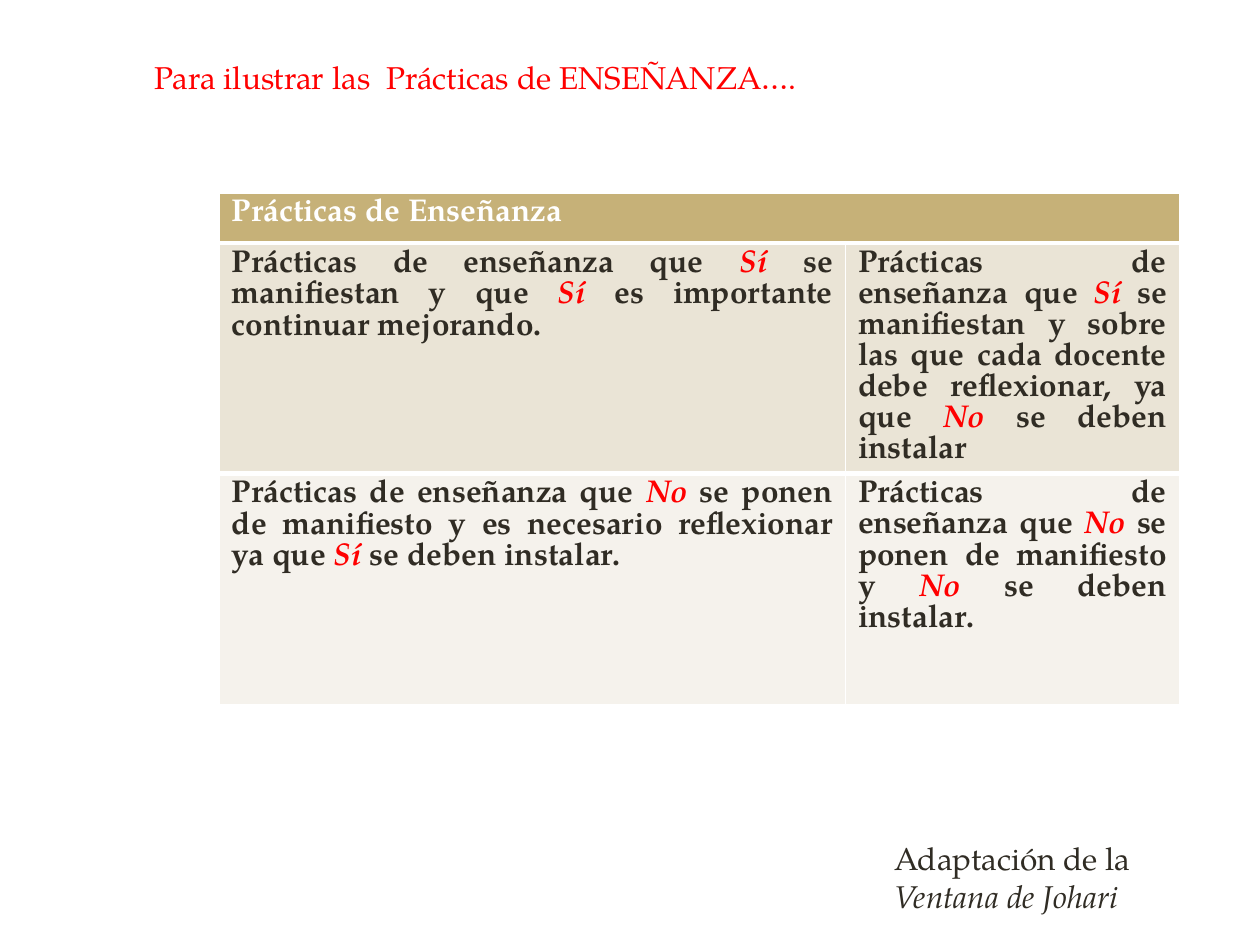
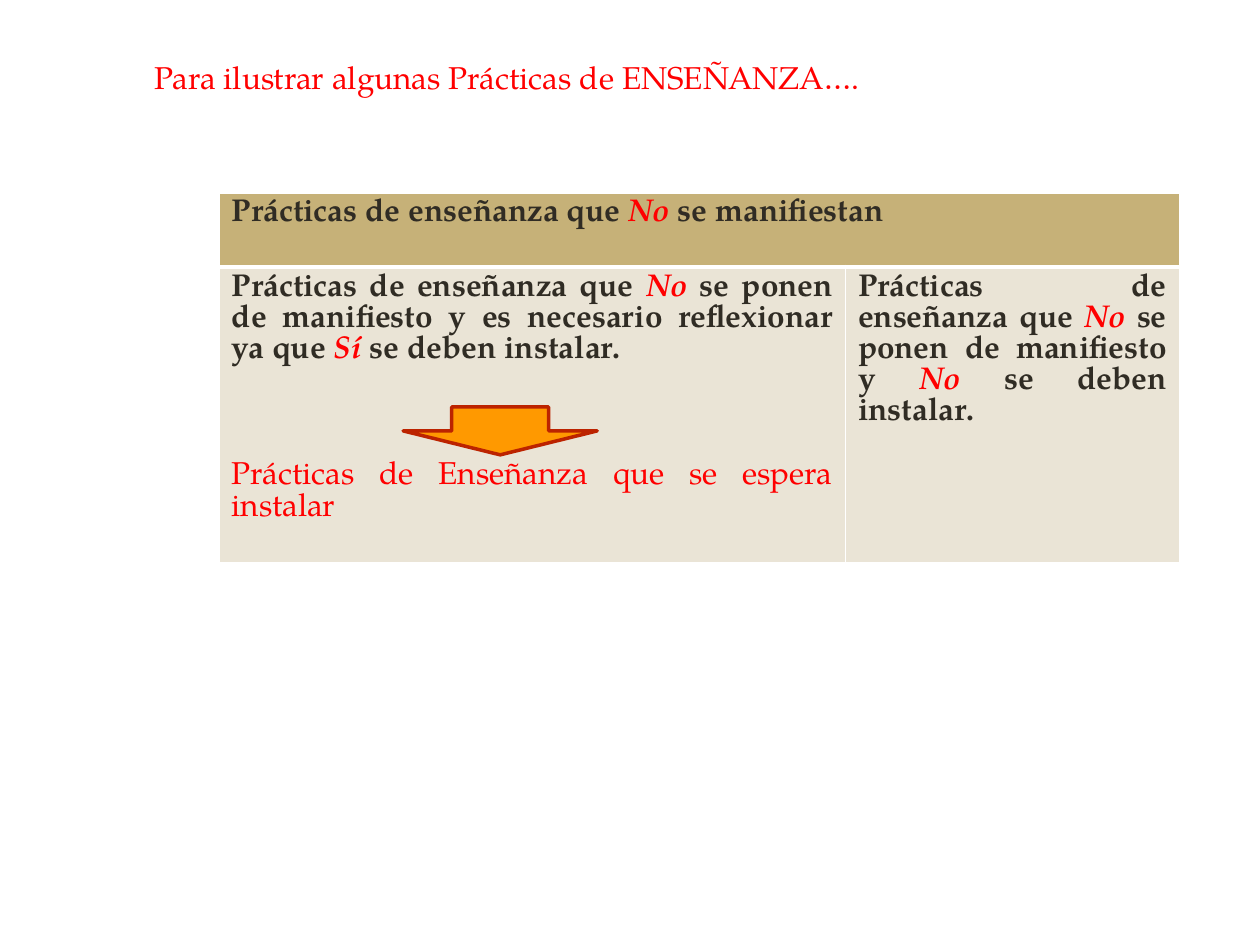
from lxml import etree
from pptx import Presentation
from pptx.dml.color import RGBColor
from pptx.enum import shapes, text
from pptx.oxml.ns import qn
from pptx.util import Inches, Pt

FONT, SIZE = "TeX Gyre Pagella", 18
RED, DARK, WHITE = "FF0000", "302C24", "FFFFFF"
GOLD, SAND, CREAM = "C6B178", "EAE4D6", "F5F2EC"
ORANGE, RUST = "FF9900", "BC2300"

TABLE_LEFT, TABLE_TOP = 1.74, 1.53
COLUMN_WIDTHS = (4.97, 2.65)
HEADER_RULE = 3  # points
GOAL_GAP = 54  # points kept free for the arrow above the goal

# Words between asterisks are red and italic.
TO_INSTALL = ("Prácticas de enseñanza que *No *se ponen de manifiesto y es necesario "
              "reflexionar ya que *Sí *se deben instalar. ")
NOT_TO_INSTALL = ("Prácticas de enseñanza que *No* se ponen de manifiesto y "
                  "*No* se deben instalar. ")
TO_IMPROVE = ("Prácticas de enseñanza que *Sí* se manifiestan y que *Sí* es "
              "importante continuar mejorando. ")
TO_DROP = ("Prácticas de enseñanza que *Sí *se manifiestan y sobre las que cada docente "
           "debe reflexionar, ya que *No* se deben instalar")

WINDOW = {
    "title": "Para ilustrar las  Prácticas de ENSEÑANZA….",
    "title_width": 6.11,
    "header": "Prácticas de Enseñanza",
    "header_color": WHITE,
    "rows": [(TO_IMPROVE, TO_DROP), (TO_INSTALL, NOT_TO_INSTALL)],
    "heights": (0.4, 1.83, 1.83),
}
ABSENT = {
    "title": "Para ilustrar algunas Prácticas de ENSEÑANZA….",
    "title_width": 7.68,
    "header": "Prácticas de enseñanza que *No *se manifiestan",
    "header_color": DARK,
    "rows": [(TO_INSTALL, NOT_TO_INSTALL)],
    "heights": (0.59, 2.1),
}
GOAL = "Prácticas de Enseñanza que se espera instalar"
CREDIT = ("Adaptación de la", " Ventana de Johari")


def color(value):
    return RGBColor.from_string(value)


def add_span(para, words, tone, bold=False, italic=False):
    span = para.add_run()
    span.text = words
    font = span.font
    font.name, font.size = FONT, Pt(SIZE)
    font.bold, font.italic = bold, italic
    font.color.rgb = color(tone)


def add_marked(para, marked, tone):
    """Write bold text, with the parts between asterisks in red italics."""
    for index, words in enumerate(marked.split("*")):
        emphasis = index % 2 == 1
        add_span(para, words, RED if emphasis else tone, bold=True, italic=emphasis)


def add_text_box(page, left, top, width, height):
    box = page.shapes.add_textbox(Inches(left), Inches(top), Inches(width), Inches(height))
    box.text_frame.word_wrap = True
    return box.text_frame.paragraphs[0]


def fill_cell(cell, fill):
    cell.fill.solid()
    cell.fill.fore_color.rgb = color(fill)


def add_cell_rule(cell, side):
    """Draw the thick white rule on one side ("lnT" or "lnB") of a cell."""
    properties = cell._tc.get_or_add_tcPr()
    line = etree.Element(qn("a:" + side), w=str(Pt(HEADER_RULE)))
    solid = etree.SubElement(line, qn("a:solidFill"))
    etree.SubElement(solid, qn("a:srgbClr"), val=WHITE)
    properties.insert(0, line)


def add_page(deck, content):
    """Add a slide with its title and table, and return both slide and table."""
    page = deck.slides.add_slide(deck.slide_layouts[6])
    heights = content["heights"]
    frame = page.shapes.add_table(
        len(heights), len(COLUMN_WIDTHS), Inches(TABLE_LEFT), Inches(TABLE_TOP),
        Inches(sum(COLUMN_WIDTHS)), Inches(sum(heights)))
    table = frame.table
    for column, width in zip(table.columns, COLUMN_WIDTHS):
        column.width = Inches(width)
    for row, height in zip(table.rows, heights):
        row.height = Inches(height)

    header = table.cell(0, 0)
    header.merge(table.cell(0, 1))
    add_marked(header.text_frame.paragraphs[0], content["header"], content["header_color"])
    for column_index in range(len(COLUMN_WIDTHS)):
        fill_cell(table.cell(0, column_index), GOLD)
        add_cell_rule(table.cell(0, column_index), "lnB")

    for row_index, (practices, fill) in enumerate(zip(content["rows"], (SAND, CREAM)), 1):
        for column_index, practice in enumerate(practices):
            cell = table.cell(row_index, column_index)
            fill_cell(cell, fill)
            if row_index == 1:
                add_cell_rule(cell, "lnT")
            para = cell.text_frame.paragraphs[0]
            para.alignment = text.PP_ALIGN.JUSTIFY
            add_marked(para, practice, DARK)

    title = add_text_box(page, 1.13, 0.41, content["title_width"], 0.4)
    add_span(title, content["title"], RED)
    return page, table


def add_credit(page):
    para = add_text_box(page, 7, 6.61, 2.79, 0.71)
    source, work = CREDIT
    add_span(para, source, DARK)
    add_span(para, work, DARK, italic=True)


def add_goal(page, table):
    """Write the goal below the first practice, with an arrow leading to it."""
    para = table.cell(1, 0).text_frame.add_paragraph()
    para.alignment = text.PP_ALIGN.JUSTIFY
    para.space_before = Pt(GOAL_GAP)
    add_span(para, GOAL, RED)

    arrow = page.shapes.add_shape(shapes.MSO_SHAPE.DOWN_ARROW, Inches(3.2), Inches(3.23),
                                  Inches(1.54), Inches(0.38))
    arrow.shadow.inherit = False
    arrow.fill.solid()
    arrow.fill.fore_color.rgb = color(ORANGE)
    arrow.line.color.rgb = color(RUST)
    arrow.line.width = Pt(2)


def main():
    deck = Presentation()
    deck.slide_width, deck.slide_height = Inches(10), Inches(7.5)
    window_page, _ = add_page(deck, WINDOW)
    add_credit(window_page)
    absent_page, absent_table = add_page(deck, ABSENT)
    add_goal(absent_page, absent_table)
    deck.save("out.pptx")


if __name__ == "__main__":
    main()
